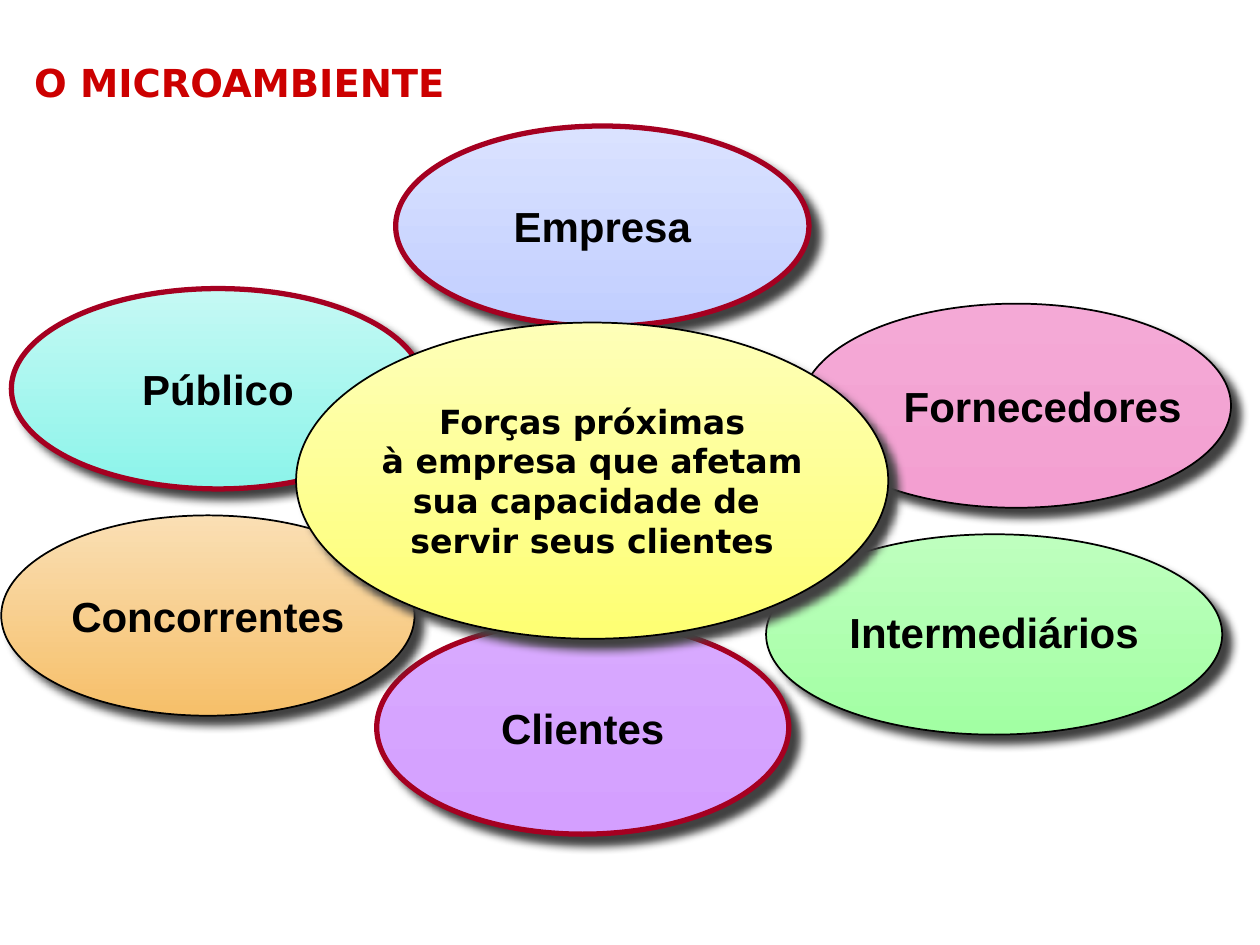
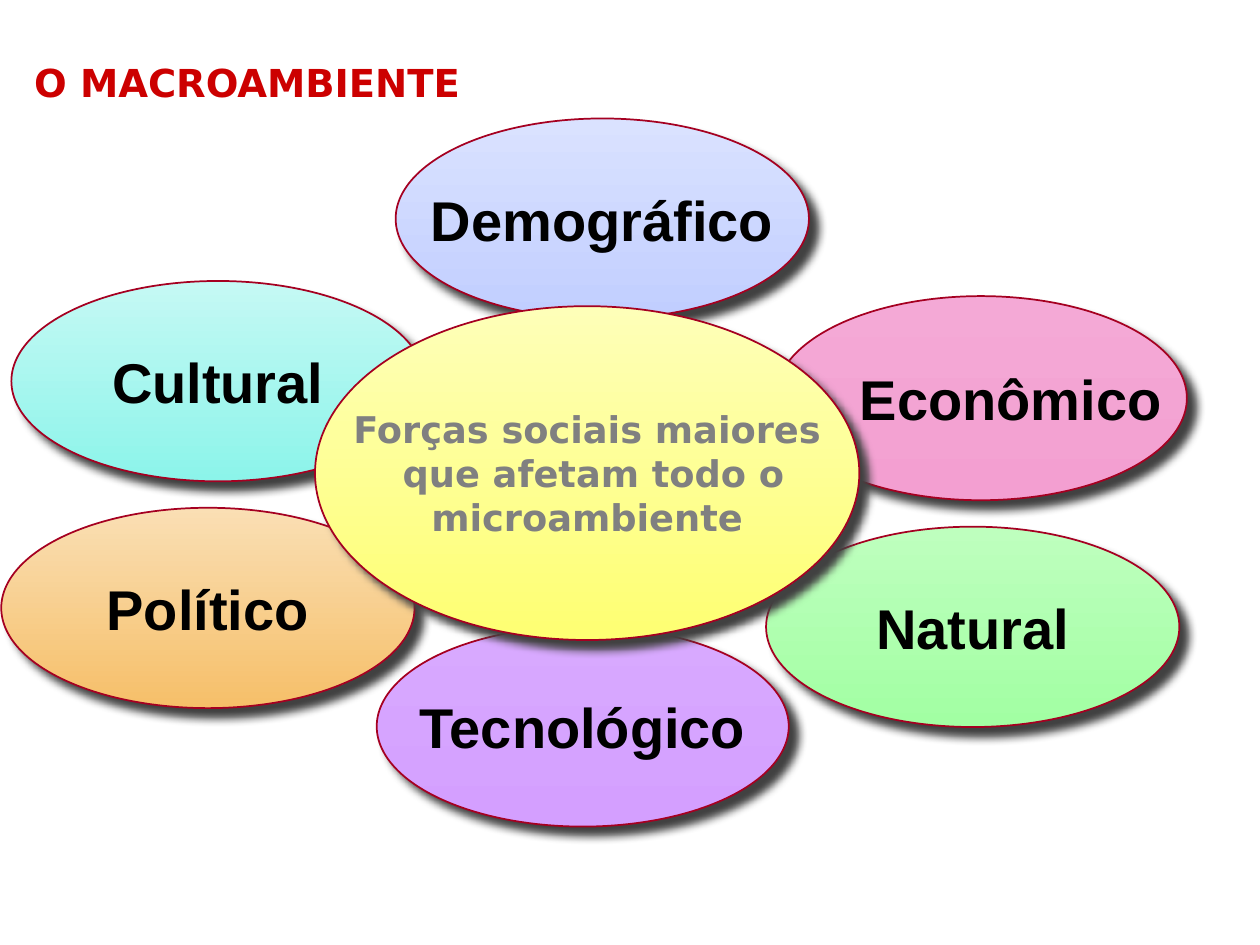
from lxml import etree
from pptx import Presentation
from pptx.dml.color import RGBColor
from pptx.enum import shapes, text
from pptx.oxml.ns import qn
from pptx.util import Inches, Pt

RED, WINE, BLACK, GREY, SHADOW = "CC0000", "A50021", "000000", "808080", "414141"
BLUE = ("DAE2FF", "C1CEFF")
PURPLE = ("D8A9FF", "D49FFF")
AQUA = ("C5F9F4", "8CF4EA")
PINK = ("F4A9D6", "F39FD1")
ORANGE = ("FADFB4", "F6BF69")
GREEN = ("BEFFBE", "A2FFA3")
YELLOW = ("FEFFB8", "FEFF72")
LABEL_FONT, HEAD_FONT = "Arial", "DejaVu Sans"
TITLE_BOX = (0.17, 0.42, 9.58, 0.58)

ENVIRONMENTS = [
    {
        "title": "O MICROAMBIENTE",
        "label_size": 24,
        "forces": [
            ("Empresa", BLUE, (3.14, 1, 3.28, 1.59), WINE, 3, {}),
            ("Clientes", PURPLE, (2.99, 4.93, 3.27, 1.69), WINE, 3, {}),
            ("Público", AQUA, (0.09, 2.29, 3.28, 1.59), WINE, 3, {}),
            ("Fornecedores", PINK, (6.36, 2.41, 3.41, 1.62), BLACK, 1, {"indent": 0.42}),
            ("Concorrentes", ORANGE, (0.01, 4.09, 3.28, 1.59), BLACK, 1, {}),
            ("Intermediários", GREEN, (6.08, 4.24, 3.62, 1.59), BLACK, 1, {"spacing": 0.9}),
        ],
        "core": ["Forças próximas", "à empresa que afetam",
                 "sua capacidade de ", "servir seus clientes"],
        "core_box": (2.35, 2.56, 4.7, 2.51),
        "core_style": (19, BLACK, BLACK),
    },
    {
        "title": "O MACROAMBIENTE",
        "label_size": 32,
        "forces": [
            ("Demográfico", BLUE, (3.14, 0.94, 3.28, 1.59), WINE, 1, {}),
            ("Tecnológico", PURPLE, (2.99, 4.97, 3.27, 1.59), WINE, 1, {}),
            ("Cultural", AQUA, (0.09, 2.23, 3.28, 1.59), WINE, 1, {}),
            ("Econômico", PINK, (6.15, 2.35, 3.27, 1.62), WINE, 1, {"indent": 0.48}),
            ("Político", ORANGE, (0.01, 4.03, 3.28, 1.59), WINE, 1, {}),
            ("Natural", GREEN, (6.08, 4.18, 3.28, 1.59), WINE, 1, {}),
        ],
        "core": ["Forças sociais maiores", " que afetam todo o", "microambiente"],
        "core_box": (2.5, 2.43, 4.32, 2.65),
        "core_style": (21, GREY, WINE),
    },
]


def rgb(value):
    return RGBColor.from_string(value)


def write(paragraph, words, font, size, color, align):
    paragraph.alignment = align
    run = paragraph.add_run()
    run.text = words
    run.font.name = font
    run.font.size = Pt(size)
    run.font.bold = True
    run.font.color.rgb = rgb(color)


def cast_shadow(ellipse):
    ellipse.shadow.inherit = False
    effects = ellipse._element.spPr.find(qn("a:effectLst"))
    outer = etree.SubElement(effects, qn("a:outerShdw"), blurRad=str(Pt(5)),
                             dist=str(Pt(7.1)), dir="2700000",
                             algn="ctr", rotWithShape="0")
    etree.SubElement(outer, qn("a:srgbClr"), val=SHADOW)


def add_ellipse(slide, box, gradient, edge, edge_width, lines, font, size, color,
                inset=0.12, indent=0, spacing=None):
    ellipse = slide.shapes.add_shape(shapes.MSO_SHAPE.OVAL, *map(Inches, box))
    ellipse.fill.gradient()
    ellipse.fill.gradient_angle = 270
    for stop, tone in zip(ellipse.fill.gradient_stops, gradient):
        stop.color.rgb = rgb(tone)
    ellipse.line.color.rgb = rgb(edge)
    ellipse.line.width = Pt(edge_width)
    cast_shadow(ellipse)

    frame = ellipse.text_frame
    frame.word_wrap = False
    frame.vertical_anchor = text.MSO_ANCHOR.MIDDLE
    frame.margin_left = Inches(inset + indent)
    frame.margin_right = Inches(inset)
    frame.margin_top = frame.margin_bottom = Inches(inset / 2)
    for number, line in enumerate(lines):
        paragraph = frame.add_paragraph() if number else frame.paragraphs[0]
        paragraph.line_spacing = spacing
        write(paragraph, line, font, size, color, text.PP_ALIGN.CENTER)


def add_title(slide, words):
    title = slide.shapes.title
    title.left, title.top, title.width, title.height = map(Inches, TITLE_BOX)
    frame = title.text_frame
    frame.auto_size = text.MSO_AUTO_SIZE.NONE
    frame.vertical_anchor = text.MSO_ANCHOR.TOP
    write(frame.paragraphs[0], words, HEAD_FONT, 22, RED, text.PP_ALIGN.LEFT)


def build_slide(deck, environment):
    slide = deck.slides.add_slide(deck.slide_layouts[5])
    add_title(slide, environment["title"])
    for label, gradient, box, edge, edge_width, options in environment["forces"]:
        add_ellipse(slide, box, gradient, edge, edge_width, [label], LABEL_FONT,
                    environment["label_size"], BLACK, **options)
    size, color, edge = environment["core_style"]
    add_ellipse(slide, environment["core_box"], YELLOW, edge, 1,
                environment["core"], HEAD_FONT, size, color, inset=0.15)


def main():
    deck = Presentation()
    deck.slide_width, deck.slide_height = Inches(10), Inches(7.5)
    for environment in ENVIRONMENTS:
        build_slide(deck, environment)
    deck.save("out.pptx")


if __name__ == "__main__":
    main()
